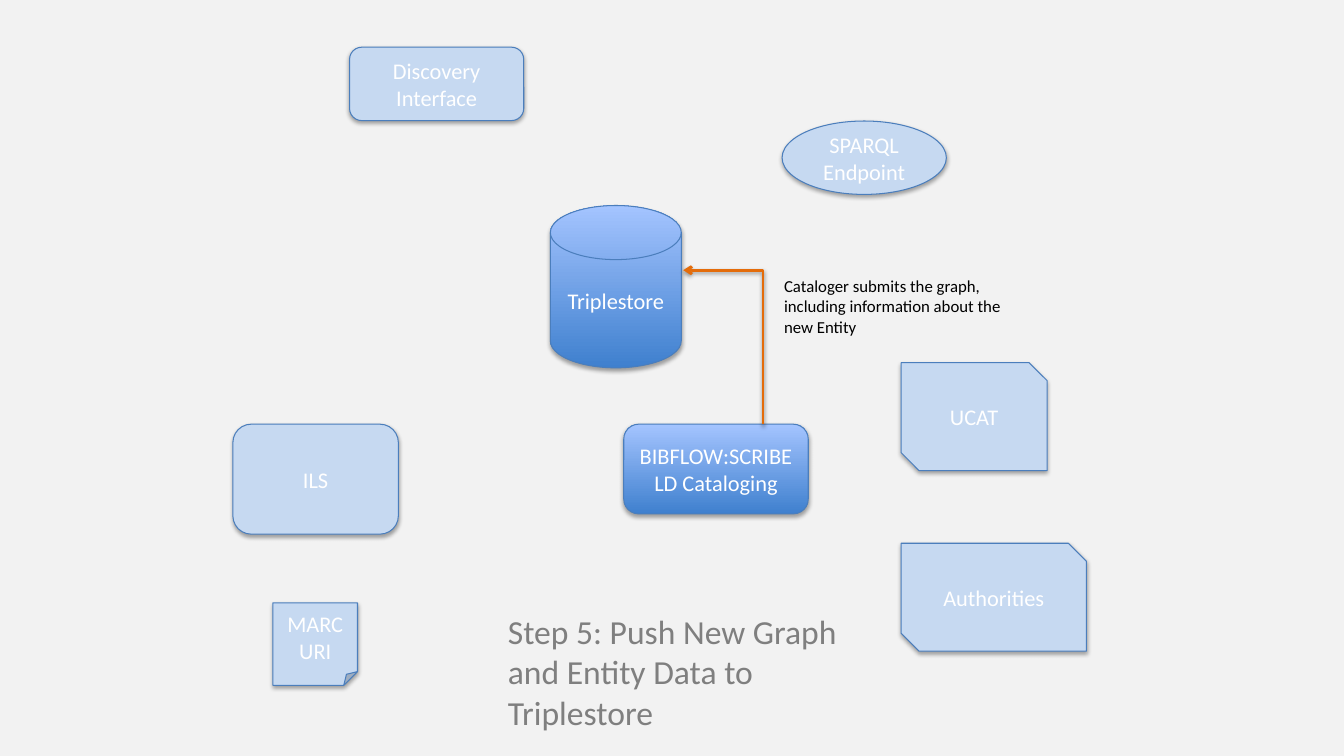
from lxml.etree import SubElement
from pptx import Presentation
from pptx.dml.color import RGBColor
from pptx.enum.shapes import MSO_CONNECTOR, MSO_SHAPE
from pptx.enum.text import MSO_ANCHOR, MSO_AUTO_SIZE, PP_ALIGN
from pptx.oxml.ns import qn
from pptx.util import Cm, Pt

FONT = "Calibri"
BACKGROUND, WHITE, BLACK, GREY = "F2F2F2", "FFFFFF", "000000", "7F7F7F"
FADED, OUTLINE, ORANGE = "C6D9F1", "4B7EBC", "E46C0A"
ACTIVE_BOTTOM, ACTIVE_TOP = "3F80CE", "A4C4FF"

# name, shape, (left, top, width, height) in cm, takes part in this step
COMPONENTS = [
    ("Triplestore", MSO_SHAPE.FLOWCHART_MAGNETIC_DISK, (13.87, 5.18, 3.3, 4.09), True),
    ("Discovery\nInterface", MSO_SHAPE.ROUNDED_RECTANGLE, (8.81, 1.19, 4.39, 1.85), False),
    ("SPARQL\nEndpoint", MSO_SHAPE.OVAL, (19.71, 3.05, 4.14, 1.85), False),
    ("ILS", MSO_SHAPE.ROUNDED_RECTANGLE, (5.87, 10.69, 4.17, 2.77), False),
    ("MARC\nURI", MSO_SHAPE.FOLDED_CORNER, (6.88, 15.19, 2.13, 2.08), False),
    ("BIBFLOW:SCRIBE\nLD Cataloging", MSO_SHAPE.ROUNDED_RECTANGLE,
     (15.72, 10.69, 4.65, 2.26), True),
    ("UCAT", MSO_SHAPE.SNIP_2_DIAG_RECTANGLE, (22.71, 9.14, 3.68, 2.72), False),
    ("Authorities", MSO_SHAPE.SNIP_2_DIAG_RECTANGLE, (22.71, 13.69, 4.67, 2.72), False),
]


def rgb(color):
    return RGBColor.from_string(color)


def add_shadow(shape, opacity):
    """Cast a soft shadow straight down."""
    properties = shape._element.spPr
    effects = SubElement(properties, qn("a:effectLst"))
    shadow = SubElement(effects, qn("a:outerShdw"), blurRad=str(Pt(3.1)),
                        dist=str(Pt(1.8)), dir="5400000", rotWithShape="0")
    color = SubElement(shadow, qn("a:srgbClr"), val=BLACK)
    SubElement(color, qn("a:alpha"), val=str(opacity * 1000))


def write_text(text_frame, text, size, color, alignment=PP_ALIGN.LEFT):
    text_frame.word_wrap = True
    text_frame.text = text
    for paragraph in text_frame.paragraphs:
        paragraph.alignment = alignment
        for run in paragraph.runs:
            run.font.name = FONT
            run.font.size = Pt(size)
            run.font.color.rgb = rgb(color)


def draw_component(slide, name, kind, box, active):
    shape = slide.shapes.add_shape(kind, *map(Cm, box))
    if active:
        shape.fill.gradient()
        shape.fill.gradient_angle = 90
        for stop, color, position in zip(shape.fill.gradient_stops,
                                         (ACTIVE_BOTTOM, ACTIVE_TOP), (0, 1)):
            stop.color.rgb = rgb(color)
            stop.position = position
    else:
        shape.fill.solid()
        shape.fill.fore_color.rgb = rgb(FADED)
    shape.line.color.rgb = rgb(OUTLINE)
    shape.line.width = Pt(0.75)
    add_shadow(shape, 35)
    shape.text_frame.vertical_anchor = MSO_ANCHOR.MIDDLE
    write_text(shape.text_frame, name, 16, WHITE, PP_ALIGN.CENTER)


def draw_submit_arrow(slide, start, end):
    """Draw an elbow arrow that rises from start, then turns left to end."""
    arrow = slide.shapes.add_connector(MSO_CONNECTOR.ELBOW, *map(Cm, start + end))
    geometry = arrow._element.spPr.find(qn("a:prstGeom"))
    SubElement(geometry.get_or_add_avLst(), qn("a:gd"), name="adj1", fmla="val 0")
    arrow.line.color.rgb = rgb(ORANGE)
    arrow.line.width = Pt(2)
    SubElement(arrow.line._get_or_add_ln(), qn("a:tailEnd"), type="arrow")
    add_shadow(arrow, 38)


def draw_caption(slide, text, box, size, color):
    caption = slide.shapes.add_textbox(*map(Cm, box))
    write_text(caption.text_frame, text, size, color)
    caption.text_frame.auto_size = MSO_AUTO_SIZE.SHAPE_TO_FIT_TEXT


def draw_workflow_slide(presentation):
    slide = presentation.slides.add_slide(presentation.slide_layouts[6])
    slide.background.fill.solid()
    slide.background.fill.fore_color.rgb = rgb(BACKGROUND)
    for component in COMPONENTS:
        draw_component(slide, *component)
    draw_submit_arrow(slide, (19.23, 10.69), (17.22, 6.81))
    draw_caption(slide, "Cataloger submits the graph, including information about "
                 "the new Entity", (19.51, 6.83, 6.12, 1.8), 12, BLACK)
    draw_caption(slide, "Step 5: Push New Graph and Entity Data to Triplestore",
                 (12.55, 15.27, 8.79, 3.33), 24, GREY)


def main():
    presentation = Presentation()
    presentation.slide_width = Cm(33.87)
    presentation.slide_height = Cm(19.05)
    draw_workflow_slide(presentation)
    presentation.save("out.pptx")


if __name__ == "__main__":
    main()
